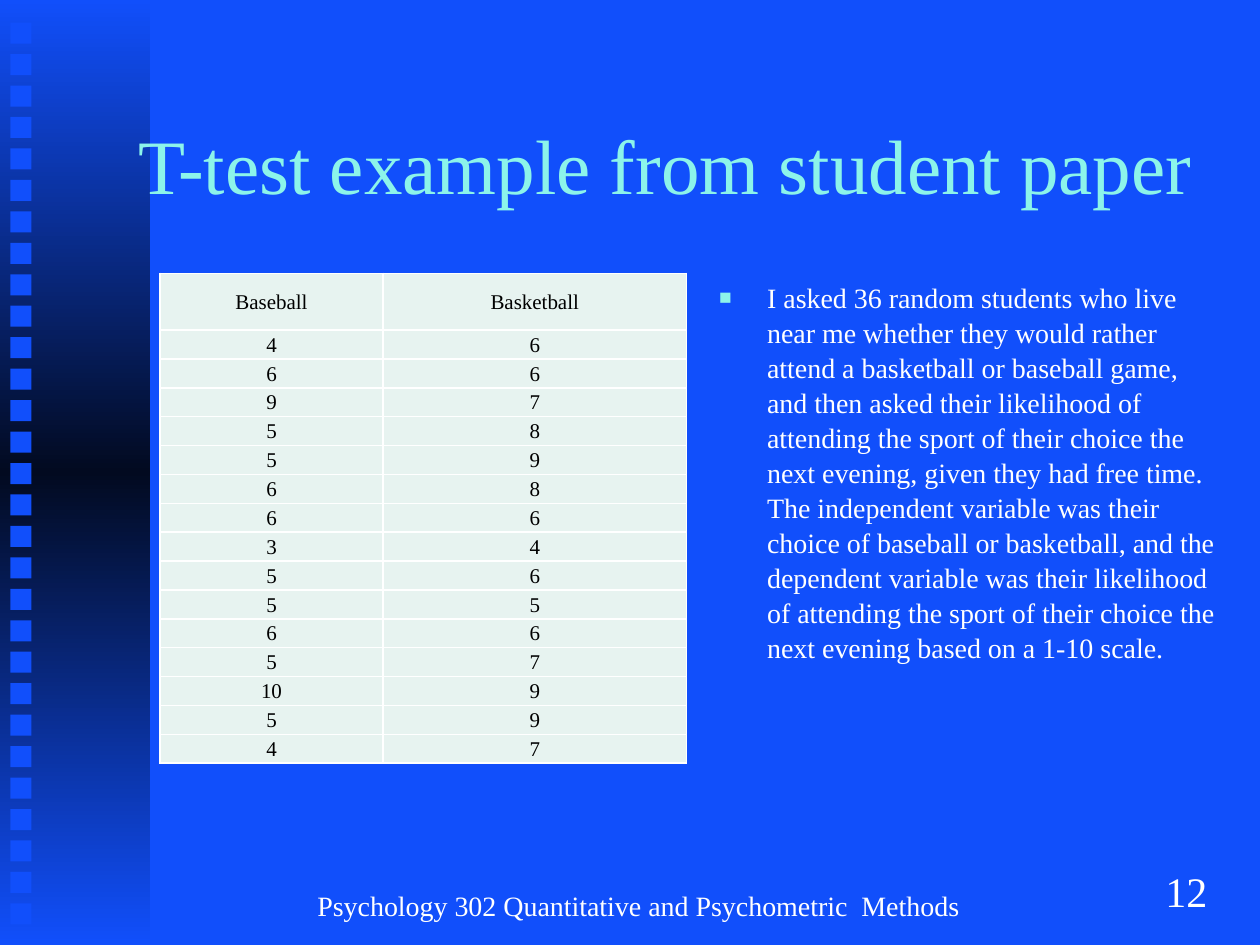
"""Build a slide with a two-column score table beside a bulleted study summary."""

from dataclasses import dataclass

from lxml.etree import SubElement
from pptx import Presentation
from pptx.dml.color import RGBColor
from pptx.enum.shapes import MSO_SHAPE as Preset
from pptx.enum.text import MSO_ANCHOR as Anchor, PP_ALIGN as Align
from pptx.oxml.ns import qn
from pptx.util import Inches, Pt

BLUE = RGBColor(0x11, 0x4F, 0xFB)
NIGHT = RGBColor(0x02, 0x0A, 0x20)
AQUA = RGBColor(0x8C, 0xF4, 0xEA)
MINT = RGBColor(0xE7, 0xF3, 0xF0)
WHITE = RGBColor(0xFF, 0xFF, 0xFF)
BLACK = RGBColor(0x00, 0x00, 0x00)

FONT = "Times New Roman"
CELL = Inches(0.1)
COLUMNS, ROWS = 100, 75
SQUARE_COUNT = 29

TITLE = "T-test example from student paper"
FOOTER = "Psychology 302 Quantitative and Psychometric  Methods"
SUMMARY = (
    "I asked 36 random students who live near me whether they would rather attend "
    "a basketball or baseball game, and then asked their likelihood of attending "
    "the sport of their choice the next evening, given they had free time. The "
    "independent variable was their choice of baseball or basketball, and the "
    "dependent variable was their likelihood of attending the sport of their "
    "choice the next evening based on a 1-10 scale."
)
SCORES = {
    "Baseball": (4, 6, 9, 5, 5, 6, 6, 3, 5, 5, 6, 5, 10, 5, 4),
    "Basketball": (6, 6, 7, 8, 9, 8, 6, 4, 6, 5, 6, 7, 9, 9, 7),
}


@dataclass(frozen=True)
class Area:
    """A rectangle measured in grid columns and rows."""

    column: float
    row: float
    width: float
    height: float

    def box(self) -> tuple[int, ...]:
        """Return left, top, width and height as lengths."""
        return tuple(int(CELL * n) for n in (self.column, self.row, self.width, self.height))


def write_text(frame, text: str, *, size: float, color: RGBColor = WHITE,
               align=Align.LEFT, anchor=Anchor.TOP, wrap: bool = True):
    """Put one formatted paragraph in a text frame and return it."""
    frame.word_wrap = wrap
    frame.vertical_anchor = anchor
    paragraph = frame.paragraphs[0]
    paragraph.alignment = align
    run = paragraph.add_run()
    run.text = text
    run.font.name = FONT
    run.font.size = Pt(size)
    run.font.color.rgb = color
    return paragraph


def add_text(slide, area: Area, text: str, **text_format):
    """Add a text box and return its paragraph."""
    return write_text(slide.shapes.add_textbox(*area.box()).text_frame, text, **text_format)


def add_rectangle(slide, area: Area, color: RGBColor):
    """Add a plain filled rectangle."""
    shape = slide.shapes.add_shape(Preset.RECTANGLE, *area.box())
    shape.shadow.inherit = False
    shape.line.fill.background()
    shape.fill.solid()
    shape.fill.fore_color.rgb = color
    return shape


def add_color(parent, color: RGBColor) -> None:
    """Append a colour element."""
    SubElement(parent, qn("a:srgbClr"), val=str(color))


def add_side_band(slide) -> None:
    """Draw the shaded band with its column of squares."""
    band = add_rectangle(slide, Area(0, 0, 11.9, 74.9), BLUE)
    band.fill.gradient()
    band.fill.gradient_angle = 90
    stops = band.fill.gradient_stops
    for stop, position, color in zip(stops, (0, 1), (BLUE, BLUE)):
        stop.position = position
        stop.color.rgb = color
    stop_list = band._element.spPr.find(qn("a:gradFill")).find(qn("a:gsLst"))
    middle = SubElement(stop_list, qn("a:gs"), pos="50000")
    add_color(middle, NIGHT)
    stop_list.insert(1, middle)
    first, last = 1.8, 71.7
    pitch = (last - first) / (SQUARE_COUNT - 1)
    for index in range(SQUARE_COUNT):
        add_rectangle(slide, Area(0.83, first + index * pitch, 1.67, 1.67), BLUE)


def add_text_shadow(paragraph) -> None:
    """Cast a shadow down and right from the letters."""
    properties = paragraph.runs[0].font._element
    effects = SubElement(properties, qn("a:effectLst"))
    properties.insert(1, effects)
    shadow = SubElement(effects, qn("a:outerShdw"), dist="35921", dir="2700000")
    add_color(shadow, BLACK)


def add_bullet(paragraph) -> None:
    """Give a paragraph a hanging square bullet."""
    properties = paragraph._p.get_or_add_pPr()
    indent = Inches(0.38)
    properties.set("marL", str(indent))
    properties.set("indent", str(-indent))
    add_color(SubElement(properties, qn("a:buClr")), AQUA)
    SubElement(properties, qn("a:buSzPct"), val="75000")
    SubElement(properties, qn("a:buFont"), typeface=FONT)
    SubElement(properties, qn("a:buChar"), char="■")


def style_cell(cell, text: str) -> None:
    """Fill, border and label one table cell."""
    cell.margin_left = cell.margin_right = Inches(0.03)
    cell.margin_top, cell.margin_bottom = Inches(0.01), 0
    write_text(cell.text_frame, text, size=12, color=BLACK, align=Align.CENTER)
    cell.vertical_anchor = Anchor.MIDDLE
    properties = cell._tc.get_or_add_tcPr()
    for side in ("a:lnL", "a:lnR", "a:lnT", "a:lnB"):
        border = SubElement(properties, qn(side), w=str(Pt(1)))
        add_color(SubElement(border, qn("a:solidFill")), WHITE)
    cell.fill.solid()
    cell.fill.fore_color.rgb = MINT


def add_score_table(slide, area: Area, header_height: float, widths: tuple[float, ...]) -> None:
    """Draw the scores with one column per sport."""
    lines = [tuple(SCORES), *zip(*SCORES.values())]
    table = slide.shapes.add_table(len(lines), len(widths), *area.box()).table
    table.first_row = table.horz_banding = False
    for column, width in zip(table.columns, widths):
        column.width = int(CELL * width)
    score_height = (area.height - header_height) / (len(lines) - 1)
    for index, (row, line) in enumerate(zip(table.rows, lines)):
        row.height = int(CELL * (score_height if index else header_height))
        for cell, value in zip(row.cells, line):
            style_cell(cell, str(value))


def main() -> None:
    """Assemble and save the slide."""
    presentation = Presentation()
    presentation.slide_width = CELL * COLUMNS
    presentation.slide_height = CELL * ROWS
    slide = presentation.slides.add_slide(presentation.slide_layouts[6])
    slide.background.fill.solid()
    slide.background.fill.fore_color.rgb = BLUE

    add_side_band(slide)
    add_text(slide, Area(91.5, 68.2, 5.9, 5), "12", size=24, wrap=False)
    add_text(slide, Area(24.2, 70, 54.1, 3.6), FOOTER, size=16)
    add_text_shadow(add_text(slide, Area(10, 6.7, 87.3, 12.5), TITLE,
                             size=44, color=AQUA, anchor=Anchor.MIDDLE))
    add_score_table(slide, Area(12.7, 21.7, 41.8, 38.9), 4.5, (17.7, 24.1))
    summary = add_text(slide, Area(56.1, 21.7, 41.8, 45), SUMMARY, size=16)
    summary.line_spacing = 1.04
    add_bullet(summary)
    presentation.save("out.pptx")


if __name__ == "__main__":
    main()
